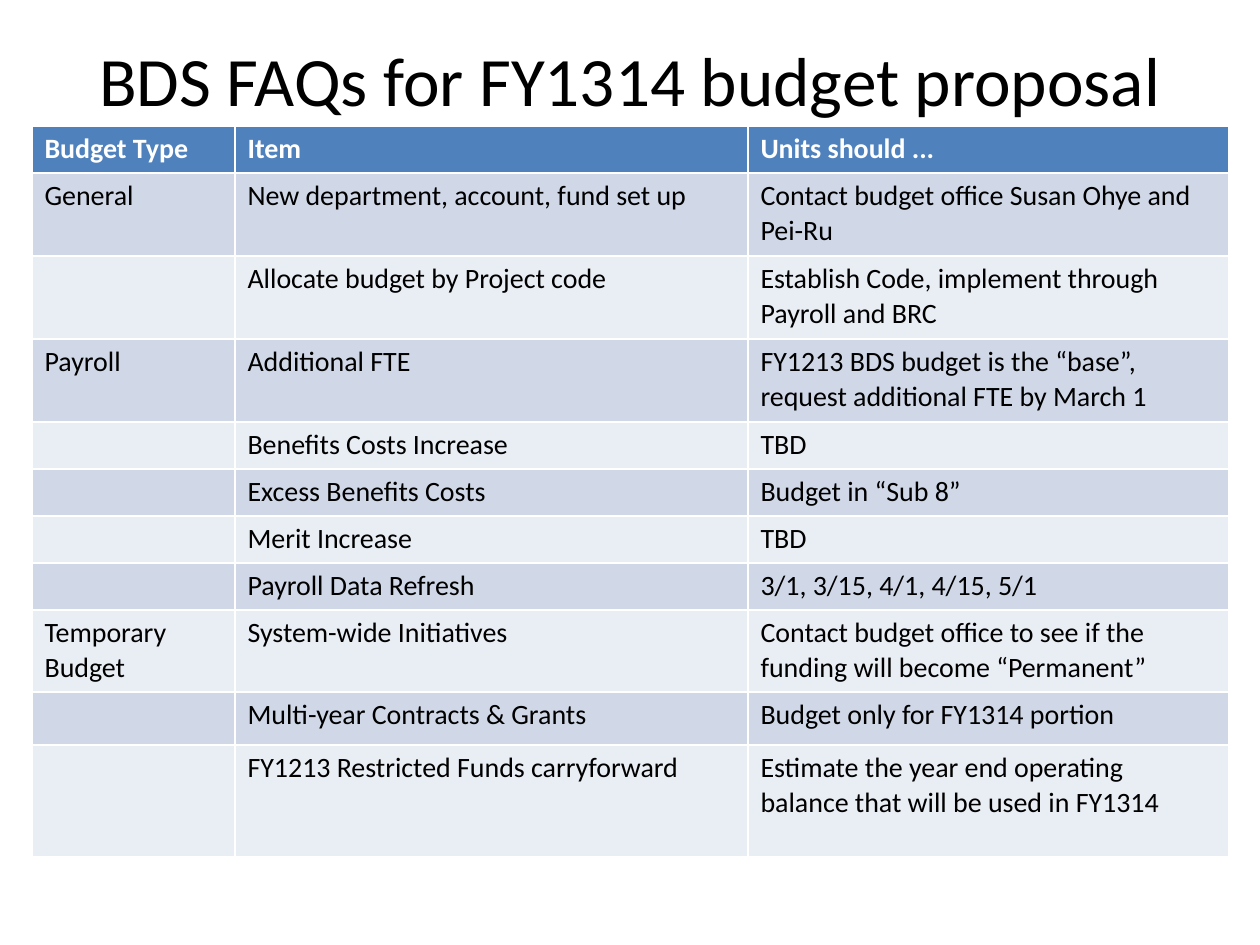
"""Build the budget proposal FAQ slide with its title and table."""
from lxml.etree import SubElement
from pptx import Presentation
from pptx.dml.color import RGBColor as Color
from pptx.enum.text import MSO_ANCHOR as Anchor, PP_ALIGN as Align
from pptx.oxml.ns import qn
from pptx.util import Pt

SCALE = 914400 / 126
FONT = "Calibri"
COLORS = {"header": "4F81BD", "odd": "D0D8E8", "even": "E9EDF4",
          "white": "FFFFFF", "black": "000000"}
COLUMN_WIDTHS = [203, 513, 481]
ROW_HEIGHTS = [47, 83, 83, 83, 47, 47, 47, 47, 82, 53, 112]
ROWS = [
    ("Budget Type", "Item", "Units should ..."),
    ("General", "New department, account, fund set up",
     "Contact budget office Susan Ohye and Pei-Ru"),
    ("", "Allocate budget by Project code",
     "Establish Code, implement through Payroll and BRC"),
    ("Payroll", "Additional FTE",
     "FY1213 BDS budget is the “base”, request additional FTE by March 1"),
    ("", "Benefits Costs Increase", "TBD"),
    ("", "Excess Benefits Costs", "Budget in “Sub 8”"),
    ("", "Merit Increase", "TBD"),
    ("", "Payroll Data Refresh", "3/1, 3/15, 4/1, 4/15, 5/1"),
    ("Temporary Budget", "System-wide Initiatives",
     "Contact budget office to see if the funding will become “Permanent”"),
    ("", "Multi-year Contracts & Grants", "Budget only for FY1314 portion"),
    ("", "FY1213 Restricted Funds carryforward",
     "Estimate the year end operating balance that will be used in FY1314"),
]


def px(length):
    return round(length * SCALE)


def add_text(paragraph, text, size, color, bold=False):
    run = paragraph.add_run()
    run.text = text
    run.font.name = FONT
    run.font.size = Pt(size)
    run.font.bold = bold
    run.font.color.rgb = Color.from_string(COLORS[color])


presentation = Presentation()
presentation.slide_width = px(1260)
presentation.slide_height = px(945)
slide = presentation.slides.add_slide(presentation.slide_layouts[5])

title = slide.shapes.title
title.left, title.top, title.width, title.height = px(63), px(0), px(1134), px(158)
title.text_frame.vertical_anchor = Anchor.MIDDLE
title_paragraph = title.text_frame.paragraphs[0]
title_paragraph.alignment = Align.CENTER
add_text(title_paragraph, "BDS FAQs for FY1314 budget proposal", 39.6, "black")

table = slide.shapes.add_table(
    len(ROWS), len(COLUMN_WIDTHS), px(32), px(126),
    px(sum(COLUMN_WIDTHS)), px(sum(ROW_HEIGHTS))).table
for column, width in zip(table.columns, COLUMN_WIDTHS):
    column.width = px(width)

for row_index, (row, height, texts) in enumerate(zip(table.rows, ROW_HEIGHTS, ROWS)):
    row.height = px(height)
    is_header = row_index == 0
    fill_name = "header" if is_header else "odd" if row_index % 2 else "even"
    for cell, text in zip(row.cells, texts):
        cell.fill.solid()
        cell.fill.fore_color.rgb = Color.from_string(COLORS[fill_name])
        paragraph = cell.text_frame.paragraphs[0]
        if text:
            add_text(paragraph, text, 16, "white" if is_header else "black", is_header)
        else:
            SubElement(paragraph._p, qn("a:endParaRPr"), sz="1600")

presentation.save("out.pptx")
